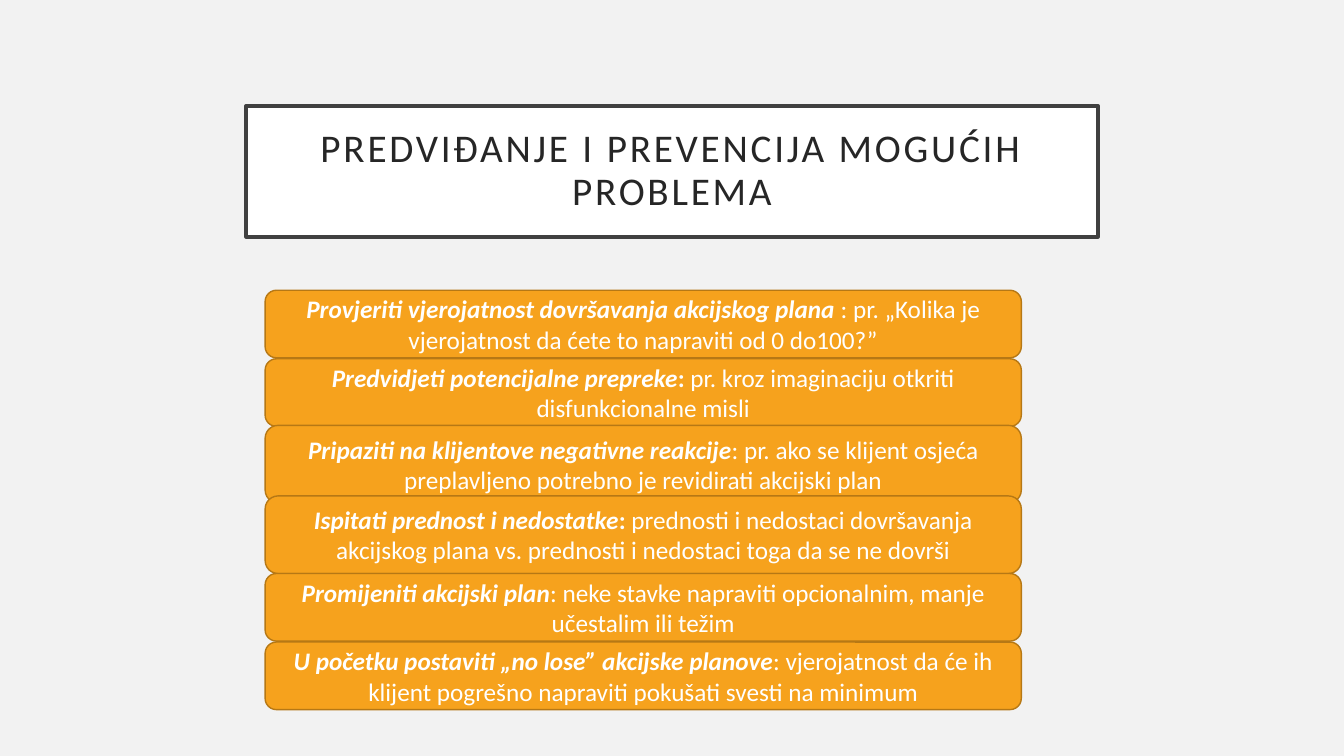
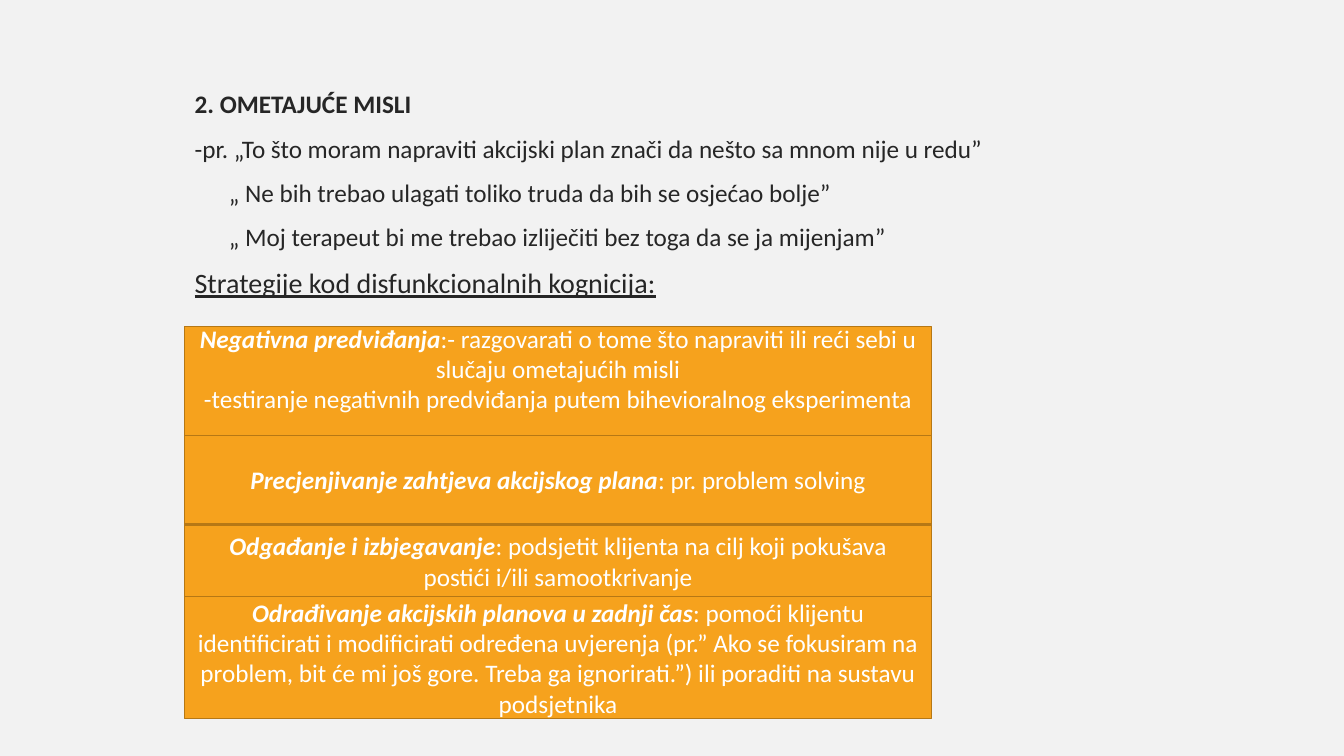
from lxml.etree import SubElement
from pptx import Presentation
from pptx.dml.color import RGBColor
from pptx.enum.shapes import MSO_SHAPE as Shape
from pptx.enum.text import MSO_ANCHOR as Anchor, MSO_AUTO_SIZE as AutoSize, PP_ALIGN as Align
from pptx.oxml.ns import qn
from pptx.util import Inches, Pt

# Shared colours and formats
BACKGROUND = RGBColor(0xF2, 0xF2, 0xF2)
WHITE = RGBColor(0xFF, 0xFF, 0xFF)
INK = RGBColor(0x26, 0x26, 0x26)
FRAME = RGBColor(0x40, 0x40, 0x40)
ORANGE = RGBColor(0xF6, 0xA2, 0x1D)
BROWN = RGBColor(0xB6, 0x78, 0x15)

BASE = {"name": "Calibri", "size": Pt(18), "bold": False, "italic": False}
TERM = {"bold": True, "italic": True}
STRONG = {"bold": True}
HEADING = {"size": Pt(20), "underline": True}
TITLE = {"size": Pt(28)}
TITLE_INSETS = {f"margin_{side}": Inches(0.2) for side in ("left", "top", "right", "bottom")}

# Slide 1: top, height, runs
PREVENTION = [
    (2.88, 0.67, [("Provjeriti vjerojatnost dovršavanja akcijskog plana ", TERM),
                  (": pr. „Kolika je vjerojatnost da ćete to napraviti od 0 do100?”", {})]),
    (3.56, 0.67, [("Predvidjeti potencijalne prepreke", TERM), (":", STRONG),
                  (" pr. kroz imaginaciju otkriti disfunkcionalne misli", {})]),
    (4.22, 0.77, [("Pripaziti na klijentove negativne reakcije", TERM),
                  (": pr. ako se klijent osjeća preplavljeno potrebno je revidirati akcijski plan", {})]),
    (4.92, 0.77, [("Ispitati prednost i nedostatke", TERM), (":", STRONG),
                  (" prednosti i nedostaci dovršavanja akcijskog plana vs. prednosti i nedostaci "
                   "toga da se ne dovrši", {})]),
    (5.69, 0.67, [("Promijeniti akcijski plan", TERM),
                  (": neke stavke napraviti opcionalnim, manje učestalim ili težim", {})]),
    (6.37, 0.67, [("U početku postaviti „no lose” akcijske planove", TERM),
                  (": vjerojatnost da će ih klijent pogrešno napraviti pokušati svesti na minimum", {})]),
]

# Slide 2: text, format, indent
THOUGHTS = [
    ("2. OMETAJUĆE MISLI", STRONG, 0),
    ("-pr. „To što moram napraviti akcijski plan znači da nešto sa mnom nije u redu”", {}, 0),
    ("„ Ne bih trebao ulagati toliko truda da bih se osjećao bolje”", {}, 0.34),
    ("„ Moj terapeut bi me trebao izliječiti bez toga da se ja mijenjam”", {}, 0.34),
    ("Strategije kod disfunkcionalnih kognicija:", HEADING, 0),
]
NEGATIVE_PREDICTIONS = (3.24, 1.08, [
    ("Negativna predviđanja", TERM),
    (":- razgovarati o tome što napraviti ili reći sebi u slučaju ometajućih misli", {})],
    [("-testiranje negativnih predviđanja putem bihevioralnog eksperimenta", {})])
STRATEGIES = [
    (4.32, 0.88, [("Precjenjivanje zahtjeva akcijskog plana", TERM), (": pr. problem solving", {})]),
    (5.21, 0.71, [("Odgađanje i izbjegavanje", TERM),
                  (": podsjetit klijenta na cilj koji pokušava postići i/ili samootkrivanje", {})]),
    (5.92, 1.21, [("Odrađivanje akcijskih planova u zadnji čas", TERM),
                  (": pomoći klijentu identificirati i modificirati određena uvjerenja (pr.” Ako se "
                   "fokusiram na problem, bit će mi još gore. Treba ga ignorirati.”) ili poraditi na "
                   "sustavu podsjetnika", {})]),
]


def apply(target, values):
    for attribute, value in values.items():
        setattr(target, attribute, value)


def place(shape, left, top, width, height):
    apply(shape, {"left": Inches(left), "top": Inches(top),
                  "width": Inches(width), "height": Inches(height)})


def paint(shape, fill, line, weight):
    shape.fill.solid()
    shape.fill.fore_color.rgb = fill
    shape.line.color.rgb = line
    shape.line.width = Pt(weight)


def add_runs(paragraph, runs, color):
    for text, values in runs:
        run = paragraph.add_run()
        run.text = text
        apply(run.font, {**BASE, **values})
        run.font.color.rgb = color


def next_paragraph(frame, index):
    return frame.add_paragraph() if index else frame.paragraphs[0]


def set_title(slide, text):
    title = slide.shapes.title
    place(title, 2.44, 1.05, 8.45, 1.3)
    paint(title, WHITE, FRAME, 2.5)
    frame = title.text_frame
    apply(frame, {**TITLE_INSETS, "word_wrap": True, "auto_size": AutoSize.NONE,
                  "vertical_anchor": Anchor.MIDDLE})
    paragraph = frame.paragraphs[0]
    apply(paragraph, {"alignment": Align.CENTER, "line_spacing": 0.9})
    add_runs(paragraph, [(text, TITLE)], INK)
    paragraph.runs[0].font._element.set("spc", "200")


def set_body(slide, lines):
    body = slide.placeholders[1]
    place(body, 1.83, 0.83, 9.07, 5.45)
    frame = body.text_frame
    apply(frame, {"word_wrap": True, "auto_size": AutoSize.NONE, "vertical_anchor": Anchor.TOP})
    for index, (text, values, indent) in enumerate(lines):
        paragraph = next_paragraph(frame, index)
        properties = paragraph._p.get_or_add_pPr()
        properties.set("marL", str(Inches(indent)))
        properties.set("indent", "0")
        SubElement(properties, qn("a:buNone"))
        apply(paragraph, {"alignment": Align.LEFT, "space_before": Pt(10 if index else 0)})
        add_runs(paragraph, [(text, values)], INK)


def add_box(slide, kind, left, width, top, height, *paragraphs):
    box = slide.shapes.add_shape(kind, Inches(left), Inches(top), Inches(width), Inches(height))
    box.shadow.inherit = False
    paint(box, ORANGE, BROWN, 1)
    frame = box.text_frame
    apply(frame, {"word_wrap": True, "vertical_anchor": Anchor.MIDDLE})
    for index, runs in enumerate(paragraphs):
        paragraph = next_paragraph(frame, index)
        paragraph.alignment = Align.CENTER
        add_runs(paragraph, runs, WHITE)
    return box


def build_prevention(prs):
    slide = prs.slides.add_slide(prs.slide_layouts[5])
    set_title(slide, "PREDVIĐANJE I PREVENCIJA MOGUĆIH PROBLEMA")
    for step in PREVENTION:
        add_box(slide, Shape.FLOWCHART_ALTERNATE_PROCESS, 2.63, 7.5, *step)


def build_thoughts(prs):
    slide = prs.slides.add_slide(prs.slide_layouts[1])
    unused_title = slide.shapes.title._element
    unused_title.getparent().remove(unused_title)
    set_body(slide, THOUGHTS)
    predictions = add_box(slide, Shape.RECTANGLE, 1.83, 7.41, *NEGATIVE_PREDICTIONS)
    # The first box carries its text above the middle
    apply(predictions.text_frame, {"margin_top": 0, "margin_bottom": Inches(0.25)})
    for strategy in STRATEGIES:
        add_box(slide, Shape.RECTANGLE, 1.83, 7.41, *strategy)


def main():
    prs = Presentation()
    apply(prs, {"slide_width": Inches(13.33), "slide_height": Inches(7.5)})
    backdrop = prs.slide_master.background.fill
    backdrop.solid()
    backdrop.fore_color.rgb = BACKGROUND
    build_prevention(prs)
    build_thoughts(prs)
    prs.save("out.pptx")


if __name__ == "__main__":
    main()
